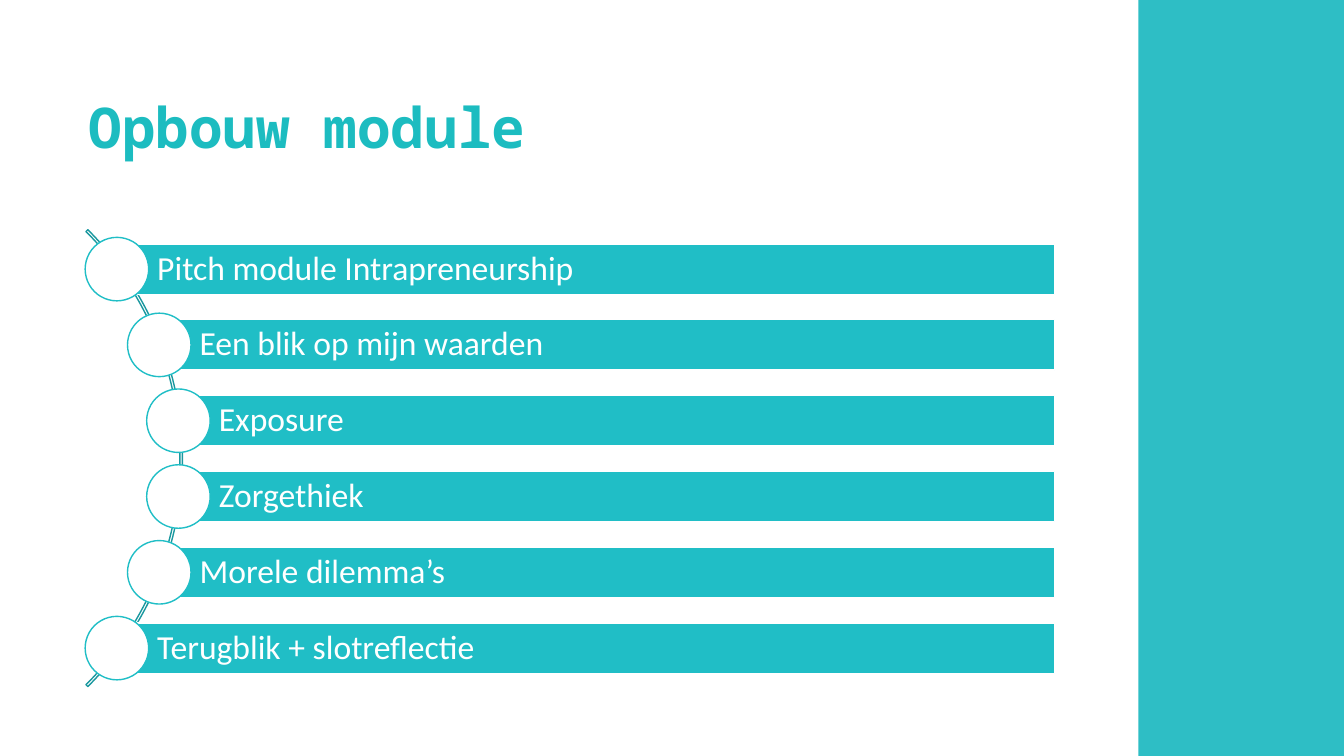
from pptx import Presentation
from pptx.dml.color import RGBColor
from pptx.enum import shapes, text
from pptx.util import Inches, Pt

TITLE = "Opbouw module"
# (text, left edge of the bar in inches)
STEPS = [
    ("Pitch module Intrapreneurship", 1.16),
    ("Een blik op mijn waarden", 1.58),
    ("Exposure", 1.77),
    ("Zorgethiek", 1.77),
    ("Morele dilemma’s", 1.58),
    ("Terugblik + slotreflectie", 1.16),
]

WHITE = RGBColor(0xFF, 0xFF, 0xFF)
TEAL = RGBColor(0x20, 0xBE, 0xC6)
BAND = RGBColor(0x2E, 0xBE, 0xC5)
TITLE_TEAL = RGBColor(0x1C, 0xBC, 0xC0)
ARC_TEAL = RGBColor(0x1A, 0x98, 0x9F)

FIRST_TOP, LAST_TOP = 2.42, 6.18
BAR_RIGHT, BAR_HEIGHT = 10.46, 0.5
DOT = 0.63
PITCH = (LAST_TOP - FIRST_TOP) / (len(STEPS) - 1)

TITLE_FONT = {"name": "Noto Sans Mono", "size": Pt(40), "bold": True}
STEP_FONT = {"name": "Calibri", "size": Pt(24), "bold": False}
STEP_FRAME = {
    "margin_left": Inches(0.4),
    "margin_right": Inches(0.07),
    "margin_top": Inches(0.07),
    "margin_bottom": Inches(0.07),
}


def add_shape(s, kind, box, fill=None, line=None):
    """Add a shadowless shape; no fill or line where the colour is None."""
    sp = s.shapes.add_shape(kind, *map(Inches, box))
    sp.shadow.inherit = False
    if fill is None:
        sp.fill.background()
    else:
        sp.fill.solid()
        sp.fill.fore_color.rgb = fill
    if line is None:
        sp.line.fill.background()
    else:
        sp.line.color.rgb = line
        sp.line.width = Pt(1)
    return sp


def write(tf, words, font, color, frame):
    tf.word_wrap = True
    tf.vertical_anchor = text.MSO_ANCHOR.MIDDLE
    for name, value in frame.items():
        setattr(tf, name, value)
    p = tf.paragraphs[0]
    p.alignment = text.PP_ALIGN.LEFT
    p.line_spacing = 0.9
    r = p.add_run()
    r.text = words
    for name, value in font.items():
        setattr(r.font, name, value)
    r.font.color.rgb = color


def add_step(s, words, left, top):
    bar = add_shape(s, shapes.MSO_SHAPE.RECTANGLE,
                    (left, top, BAR_RIGHT - left, BAR_HEIGHT), TEAL, WHITE)
    write(bar.text_frame, words, STEP_FONT, WHITE, STEP_FRAME)
    dot_top = top + (BAR_HEIGHT - DOT) / 2
    add_shape(s, shapes.MSO_SHAPE.OVAL,
              (left - DOT / 2, dot_top, DOT, DOT), WHITE, TEAL)


def main():
    prs = Presentation()
    prs.slide_width, prs.slide_height = Inches(13.33), Inches(7.5)
    s = prs.slides.add_slide(prs.slide_layouts[6])

    add_shape(s, shapes.MSO_SHAPE.RECTANGLE, (11.29, 0, 2.04, 7.5), BAND)
    title = s.shapes.add_textbox(*map(Inches, (0.78, 0.57, 9.75, 1.45)))
    write(title.text_frame, TITLE, TITLE_FONT, TITLE_TEAL, {})

    arc = add_shape(s, shapes.MSO_SHAPE.BLOCK_ARC,
                    (-4.6, 1.34, 6.41, 6.41), line=ARC_TEAL)
    for i, value in enumerate((189, 27, 0.004)):
        arc.adjustments[i] = value

    for i, (words, left) in enumerate(STEPS):
        add_step(s, words, left, FIRST_TOP + i * PITCH)

    prs.save("out.pptx")


if __name__ == "__main__":
    main()
